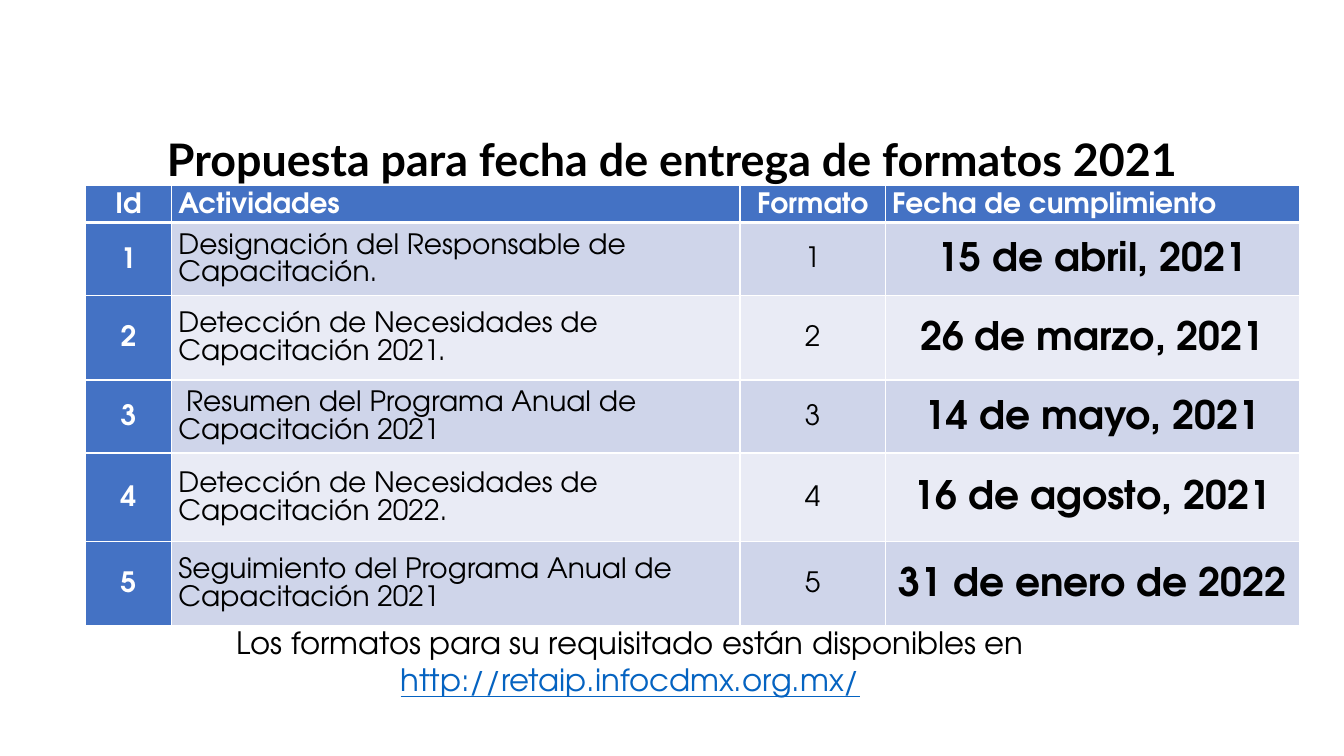
from lxml.etree import SubElement
from pptx import Presentation
from pptx.dml.color import RGBColor
from pptx.enum.text import MSO_ANCHOR as ANCHOR, MSO_AUTO_SIZE as AUTO, PP_ALIGN as ALIGN
from pptx.oxml.ns import qn
from pptx.util import Inches, Pt

TITLE_FONT, BODY_FONT = "Lato", "TeX Gyre Adventor"
BLACK, WHITE, BLUE, LINK = "000000", "FFFFFF", "4472C4", "0563C1"
BANDS = ("CFD5EA", "E9EBF5")
COL_WIDTHS = (0.85, 5.64, 1.44, 4.11)
ROW_HEIGHTS = (0.35, 0.61, 0.84, 0.71, 0.88, 0.83)
HEADER = ("Id", "Actividades", "Formato", "Fecha de cumplimiento")
ACTIVITIES = (
    ("Designación del Responsable de Capacitación.", "15 de abril, 2021"),
    ("Detección de Necesidades de Capacitación 2021.", "26 de marzo, 2021"),
    (" Resumen del Programa Anual de Capacitación 2021", "14 de mayo, 2021"),
    ("Detección de Necesidades de Capacitación 2022.", "16 de agosto, 2021"),
    ("Seguimiento del Programa Anual de Capacitación 2021", "31 de enero de 2022"),
)


def rgb(color):
    return RGBColor.from_string(color)


def write(p, text, size, color=BLACK, font=BODY_FONT, align=ALIGN.CENTER,
          bold=False, underline=False, **spacing):
    """Add one run to a paragraph; spacing holds paragraph attributes."""
    for name, value in {"alignment": align, **spacing}.items():
        setattr(p, name, value)
    r = p.add_run()
    r.text = text
    look = {"name": font, "size": Pt(size), "bold": bold, "underline": underline}
    for name, value in look.items():
        setattr(r.font, name, value)
    r.font.color.rgb = rgb(color)


def add_text_frame(slide, box):
    tf = slide.shapes.add_textbox(*map(Inches, box)).text_frame
    tf.word_wrap = True
    return tf


def add_title(slide, box):
    p = add_text_frame(slide, box).paragraphs[0]
    write(p, "Propuesta para fecha de entrega de formatos 2021", 32,
          font=TITLE_FONT, bold=True, line_spacing=0.9)


def set_borders(cell, top, bottom):
    """Draw white borders; top and bottom are widths in points."""
    tcPr = cell._tc.get_or_add_tcPr()
    for side, width in {"L": 1, "R": 1, "T": top, "B": bottom}.items():
        ln = SubElement(tcPr, qn(f"a:ln{side}"), w=str(Pt(width)))
        fill = SubElement(ln, qn("a:solidFill"))
        SubElement(fill, qn("a:srgbClr"), val=WHITE)


def fill_cell(cell, row, col, text):
    heading = row == 0 or col == 0
    date = row > 0 and col == 3
    left = col == 1 or (row == 0 and col == 3)
    set_borders(cell, top=3 if row == 1 else 1, bottom=3 if row == 0 else 1)
    cell.fill.solid()
    cell.fill.fore_color.rgb = rgb(BLUE if heading else BANDS[(row - 1) % 2])
    layout = {"vertical_anchor": ANCHOR.MIDDLE, "margin_left": Inches(0.07),
              "margin_right": Inches(0.07), "margin_top": Inches(0.01),
              "margin_bottom": 0}
    for name, value in layout.items():
        setattr(cell, name, value)
    write(cell.text_frame.paragraphs[0], text, 28 if date else 20,
          color=WHITE if heading else BLACK, bold=heading or date,
          align=ALIGN.LEFT if left else ALIGN.CENTER,
          line_spacing=1.07, space_after=Pt(8))


def add_schedule(slide, box):
    rows = [HEADER] + [(str(n), activity, str(n), date)
                       for n, (activity, date) in enumerate(ACTIVITIES, 1)]
    table = slide.shapes.add_table(len(rows), len(HEADER), *map(Inches, box)).table
    for column, width in zip(table.columns, COL_WIDTHS):
        column.width = Inches(width)
    for i, (height, texts) in enumerate(zip(ROW_HEIGHTS, rows)):
        table.rows[i].height = Inches(height)
        for j, text in enumerate(texts):
            fill_cell(table.cell(i, j), i, j, text)


def add_download_note(slide, box):
    tf = add_text_frame(slide, box)
    tf.auto_size = AUTO.SHAPE_TO_FIT_TEXT
    write(tf.paragraphs[0], "Los formatos para su requisitado están disponibles en", 22)
    write(tf.add_paragraph(), "http://retaip.infocdmx.org.mx/", 22,
          color=LINK, underline=True)


def main():
    prs = Presentation()
    prs.slide_width, prs.slide_height = Inches(13.33), Inches(7.5)
    slide = prs.slides.add_slide(prs.slide_layouts[6])
    add_title(slide, (-0.54, 1.32, 14.42, 0.44))
    add_schedule(slide, (0.85, 1.84, sum(COL_WIDTHS), sum(ROW_HEIGHTS)))
    add_download_note(slide, (-0.34, 6.14, 13.18, 0.84))
    prs.save("out.pptx")


if __name__ == "__main__":
    main()
